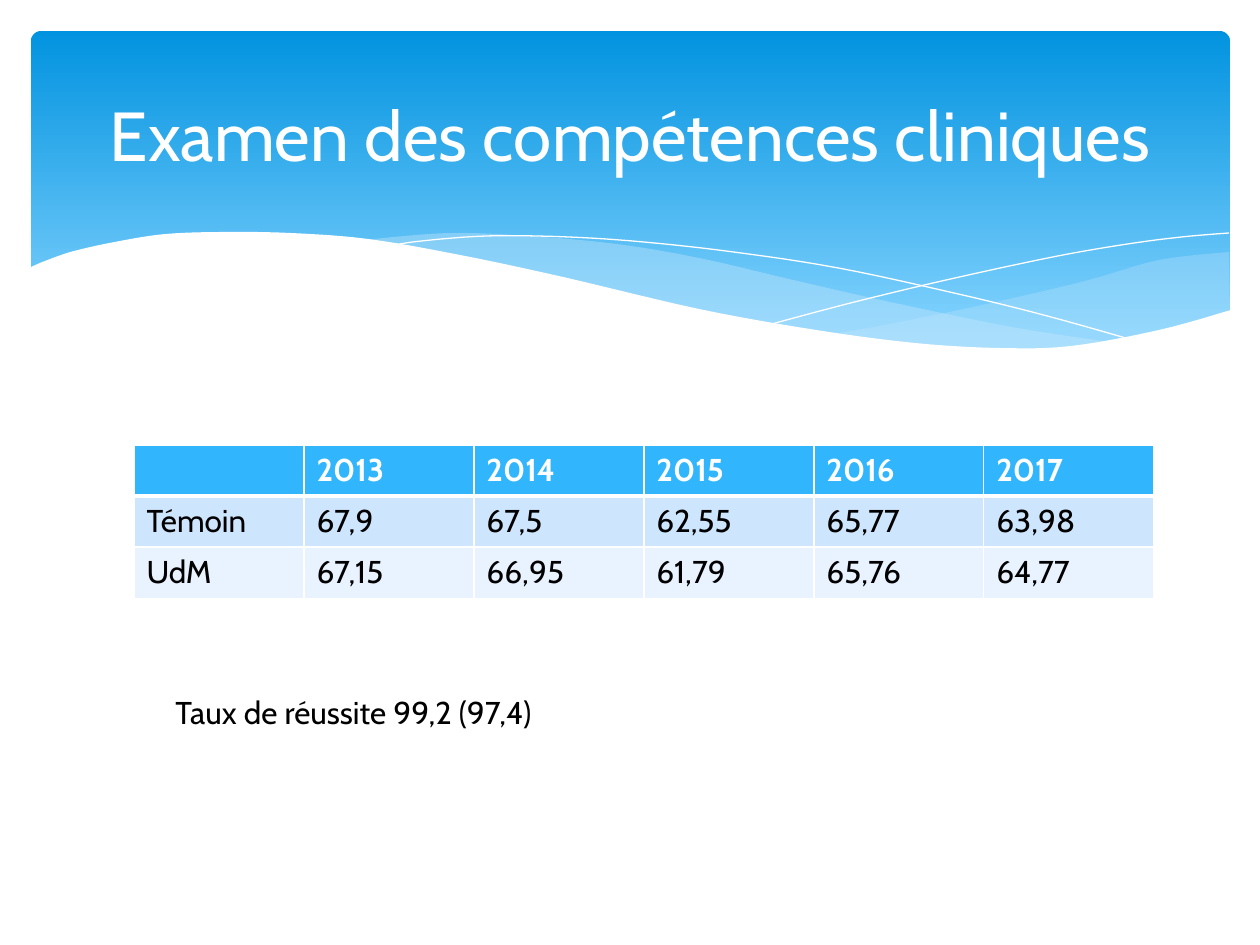
import dataclasses
import typing

import lxml.etree
import pptx
import pptx.dml.color
import pptx.enum.dml
import pptx.enum.shapes
import pptx.enum.text
import pptx.oxml.ns
import pptx.util

EMU_PER_PX = 914400 / 126
FONT = "Cabin"
WHITE = "FFFFFF"
BLACK = "000000"
PALE_BLUE = "C6E7FC"
HEADER_BLUE = "31B6FD"
ROW_FILLS = [HEADER_BLUE, "CEE5FE", "E8F3FF"]
ROWS = [
    ["", "2013", "2014", "2015", "2016", "2017"],
    ["Témoin", "67,9", "67,5", "62,55", "65,77", "63,98"],
    ["UdM", "67,15", "66,95", "61,79", "65,76", "64,77"],
]
Point = tuple[float, float]


@dataclasses.dataclass
class Wave:
    edges: list[list[Point]]
    fill: typing.Optional[str] = None
    opacity: int = 100


WAVES = [
    Wave([
        [(1229, 252), (1159, 260), (1085, 281), (982, 305), (890, 324), (833, 334)],
        [(833, 334), (922, 345), (1012, 350), (1087, 347), (1150, 336), (1196, 324), (1230, 311)],
    ], PALE_BLUE, 29),
    Wave([
        [(1125, 344), (1017, 328), (890, 302), (793, 280), (699, 258), (616, 244),
         (529, 236), (455, 233), (394, 237), (360, 241)],
        [(360, 241), (483, 261), (566, 280), (713, 312), (819, 333), (910, 345),
         (1003, 350), (1080, 349), (1125, 344)],
    ], PALE_BLUE, 40),
    Wave([[(389, 246), (422, 241), (488, 236), (567, 237), (643, 242), (733, 252),
           (838, 268), (958, 294), (1047, 316), (1143, 343)]]),
    Wave([[(772, 324), (847, 304), (942, 281), (1053, 257), (1128, 244), (1182, 237), (1229, 233)]]),
    Wave([
        [(1231, 310), (1159, 330), (1071, 346), (999, 348), (915, 343), (816, 330),
         (699, 309), (563, 277), (460, 255), (368, 239), (290, 233), (223, 232),
         (166, 234), (120, 241), (74, 251), (45, 261), (29, 268)],
        [(29, 415), (1231, 415)],
    ], WHITE),
]


def px(length: float) -> int:
    return round(length * EMU_PER_PX)


def color(value: str) -> pptx.dml.color.RGBColor:
    return pptx.dml.color.RGBColor.from_string(value)


def write_text(frame, text: str, *, size: float = 18, fill: str = BLACK,
               bold: bool = False, align=pptx.enum.text.PP_ALIGN.LEFT,
               anchor=pptx.enum.text.MSO_ANCHOR.TOP) -> None:
    frame.word_wrap = True
    frame.vertical_anchor = anchor
    paragraph = frame.paragraphs[0]
    paragraph.alignment = align
    paragraph.font.size = pptx.util.Pt(size)
    if text:
        run = paragraph.add_run()
        run.text = text
        run.font.name = FONT
        run.font.size = pptx.util.Pt(size)
        run.font.bold = bold
        run.font.color.rgb = color(fill)


def smooth(points: list[Point], steps: int = 6) -> list[Point]:
    if len(points) < 3:
        return points
    padded = [points[0], *points, points[-1]]
    result = []
    for before, start, end, after in zip(padded, padded[1:], padded[2:], padded[3:]):
        for step in range(steps):
            t = step / steps
            result.append(tuple(
                b + t * ((c - a) + t * ((2 * a - 5 * b + 4 * c - d) + t * (3 * b - a - 3 * c + d))) / 2
                for a, b, c, d in zip(before, start, end, after)))
    return result + [points[-1]]


def draw_wave(slide, wave: Wave) -> None:
    points = [(px(x), px(y)) for edge in wave.edges for x, y in smooth(edge)]
    builder = slide.shapes.build_freeform(*points[0], scale=1.0)
    builder.add_line_segments(points[1:], close=wave.fill is not None)
    shape = builder.convert_to_shape()
    shape.shadow.inherit = False
    if wave.fill is None:
        shape.fill.background()
        shape.line.color.rgb = color(WHITE)
        shape.line.width = pptx.util.Pt(0)
        return
    shape.line.fill.background()
    shape.fill.solid()
    shape.fill.fore_color.rgb = color(wave.fill)
    if wave.opacity < 100:
        solid = shape.element.spPr.find(pptx.oxml.ns.qn("a:solidFill"))
        lxml.etree.SubElement(solid[0], pptx.oxml.ns.qn("a:alpha"), val=str(wave.opacity * 1000))


def draw_banner(slide) -> None:
    shape = slide.shapes.add_shape(pptx.enum.shapes.MSO_SHAPE.ROUNDED_RECTANGLE,
                                   px(31), px(31), px(1199), px(340))
    shape.adjustments[0] = 0.03
    shape.shadow.inherit = False
    shape.line.fill.background()
    shape.fill.gradient()
    shape.fill.gradient_angle = 270
    for stop, position, value in zip(shape.fill.gradient_stops, (0, 0.9), ("0293E0", "83D3FE")):
        stop.position = position
        stop.color.rgb = color(value)


def set_border(cell, side: str, points: float) -> None:
    line = lxml.etree.SubElement(cell._tc.get_or_add_tcPr(), pptx.oxml.ns.qn(f"a:ln{side}"),
                                 w=str(pptx.util.Pt(points)))
    solid = lxml.etree.SubElement(line, pptx.oxml.ns.qn("a:solidFill"))
    lxml.etree.SubElement(solid, pptx.oxml.ns.qn("a:srgbClr"), val=WHITE)


def draw_table(slide) -> None:
    column_width, row_height = 170, 51
    table = slide.shapes.add_table(len(ROWS), len(ROWS[0]), px(134), px(445),
                                   px(column_width * len(ROWS[0])),
                                   px(row_height * len(ROWS))).table
    for row_index, values in enumerate(ROWS):
        header = row_index == 0
        for column_index, value in enumerate(values):
            cell = table.cell(row_index, column_index)
            for side in "LRTB":
                thick = (row_index, side) in ((0, "B"), (1, "T"))
                set_border(cell, side, 3 if thick else 1)
            cell.fill.solid()
            cell.fill.fore_color.rgb = color(ROW_FILLS[row_index])
            write_text(cell.text_frame, value, bold=header, fill=WHITE if header else BLACK)


def draw_title(slide) -> None:
    title = slide.shapes.title
    title.left, title.top, title.width, title.height = px(63), px(47), px(1134), px(173)
    title.text_frame.auto_size = pptx.enum.text.MSO_AUTO_SIZE.NONE
    write_text(title.text_frame, "Examen des compétences cliniques", size=39.6, fill=WHITE,
               align=pptx.enum.text.PP_ALIGN.CENTER, anchor=pptx.enum.text.MSO_ANCHOR.MIDDLE)
    title.element.getparent().append(title.element)


def main() -> None:
    presentation = pptx.Presentation()
    presentation.slide_width, presentation.slide_height = px(1260), px(945)
    slide = presentation.slides.add_slide(presentation.slide_layouts[5])
    draw_banner(slide)
    for wave in WAVES:
        draw_wave(slide, wave)
    draw_table(slide)
    draw_title(slide)
    note = slide.shapes.add_textbox(px(163), px(687), px(473), px(50))
    write_text(note.text_frame, "Taux de réussite 99,2 (97,4)")
    presentation.save("out.pptx")


if __name__ == "__main__":
    main()
